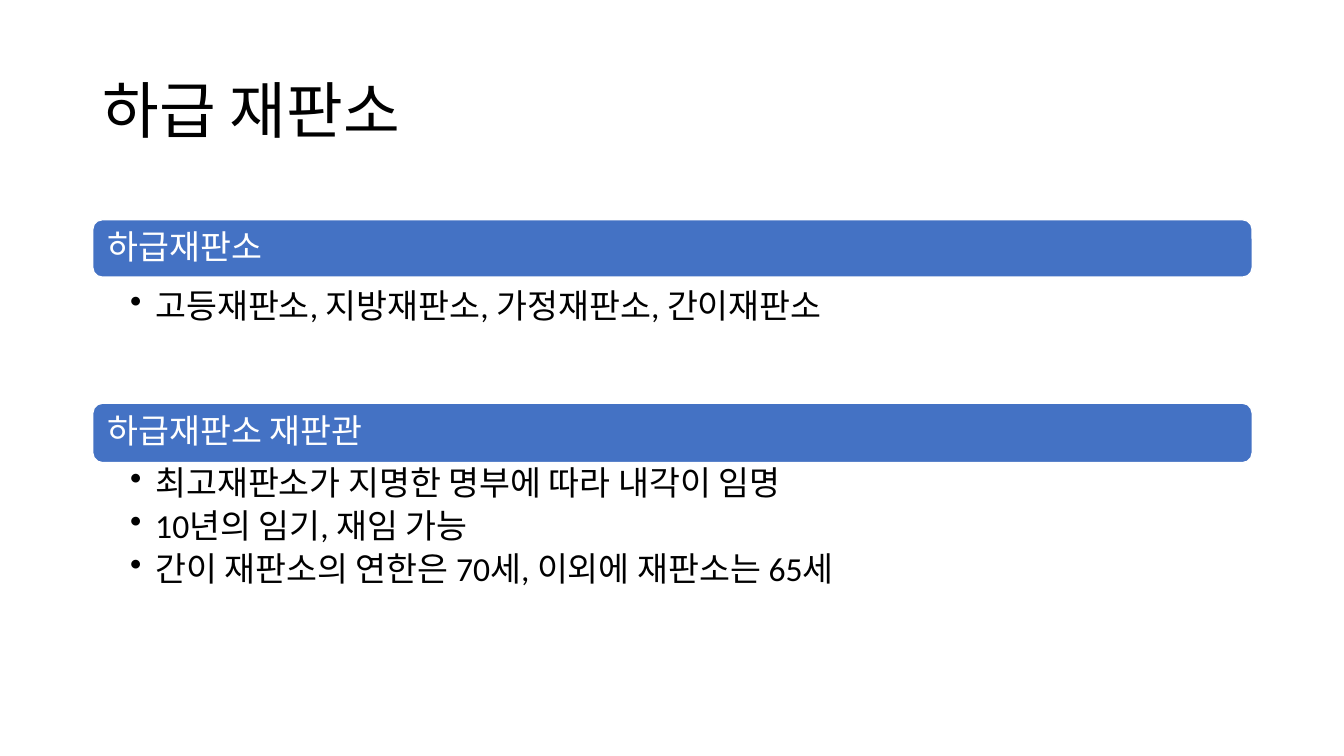
from dataclasses import dataclass

from lxml import etree
from pptx import Presentation
from pptx.dml.color import RGBColor
from pptx.enum import shapes, text
from pptx.oxml import ns
from pptx.util import Inches, Pt


@dataclass(frozen=True)
class Theme:
    font: str = "Calibri"
    ink: RGBColor = RGBColor(0, 0, 0)
    paper: RGBColor = RGBColor(255, 255, 255)
    blue: RGBColor = RGBColor(0x44, 0x72, 0xC4)
    head: Pt = Pt(44)
    body: Pt = Pt(24)


THEME = Theme()
LEFT, WIDE = 0.92, 11.5

# bar top, bar height, heading, list top, list height, items
COURTS = [
    (2.18, 0.57, "하급재판소", 2.84, 1.16,
     ["고등재판소, 지방재판소, 가정재판소, 간이재판소"]),
    (4.0, 0.59, "하급재판소 재판관", 4.6, 1.88,
     ["최고재판소가 지명한 명부에 따라 내각이 임명",
      "10년의 임기, 재임 가능",
      "간이 재판소의 연한은 70세, 이외에 재판소는 65세"]),
]


def place(top, high):
    return [Inches(v) for v in (LEFT, top, WIDE, high)]


def write(shape, lines, size, color, anchor, pads):
    """Fill a shape with left-aligned paragraphs; pads are left, top, right, bottom."""
    frame = shape.text_frame
    sides = ("margin_left", "margin_top", "margin_right", "margin_bottom")
    form = dict(zip(sides, map(Inches, pads)), word_wrap=True, vertical_anchor=anchor)
    for name, value in form.items():
        setattr(frame, name, value)
    frame.text = "\n".join(lines)
    for para in frame.paragraphs:
        para.alignment = text.PP_ALIGN.LEFT
        para.line_spacing = 0.9
        for name, value in {"name": THEME.font, "size": size}.items():
            setattr(para.runs[0].font, name, value)
        para.runs[0].font.color.rgb = color
    return frame.paragraphs


def bullet(para):
    """Add a hanging bullet and a gap of 20% after the paragraph."""
    para.level = 1
    props = para._p.get_or_add_pPr()
    props.set("marL", str(Inches(0.25)))
    props.set("indent", str(-Inches(0.25)))
    gap = etree.SubElement(props, ns.qn("a:spcAft"))
    etree.SubElement(gap, ns.qn("a:spcPct")).set("val", "20000")
    etree.SubElement(props, ns.qn("a:buChar")).set("char", "•")


def add_title(slide, words):
    box = slide.shapes.add_textbox(*place(0.4, 1.45))
    write(box, [words], THEME.head, THEME.ink, text.MSO_ANCHOR.MIDDLE,
          (0.1, 0.05, 0.1, 0.05))


def add_bar(slide, top, high, words):
    bar = slide.shapes.add_shape(shapes.MSO_SHAPE.ROUNDED_RECTANGLE, *place(top, high))
    bar.shadow.inherit = False
    bar.fill.solid()
    bar.fill.fore_color.rgb = THEME.blue
    bar.line.color.rgb = THEME.paper
    bar.line.width = Pt(1)
    write(bar, [words], THEME.body, THEME.paper, text.MSO_ANCHOR.MIDDLE,
          (0.12, 0.1, 0.12, 0.1))


def add_list(slide, top, high, items):
    box = slide.shapes.add_textbox(*place(top, high))
    for para in write(box, items, THEME.body, THEME.ink, text.MSO_ANCHOR.TOP,
                      (0.37, 0.03, 0.19, 0.03)):
        bullet(para)


def main():
    deck = Presentation()
    deck.slide_width, deck.slide_height = Inches(13.33), Inches(7.5)
    slide = deck.slides.add_slide(deck.slide_layouts[6])
    add_title(slide, "하급 재판소")
    for top, high, words, start, depth, items in COURTS:
        add_bar(slide, top, high, words)
        add_list(slide, start, depth, items)
    deck.save("out.pptx")


if __name__ == "__main__":
    main()
